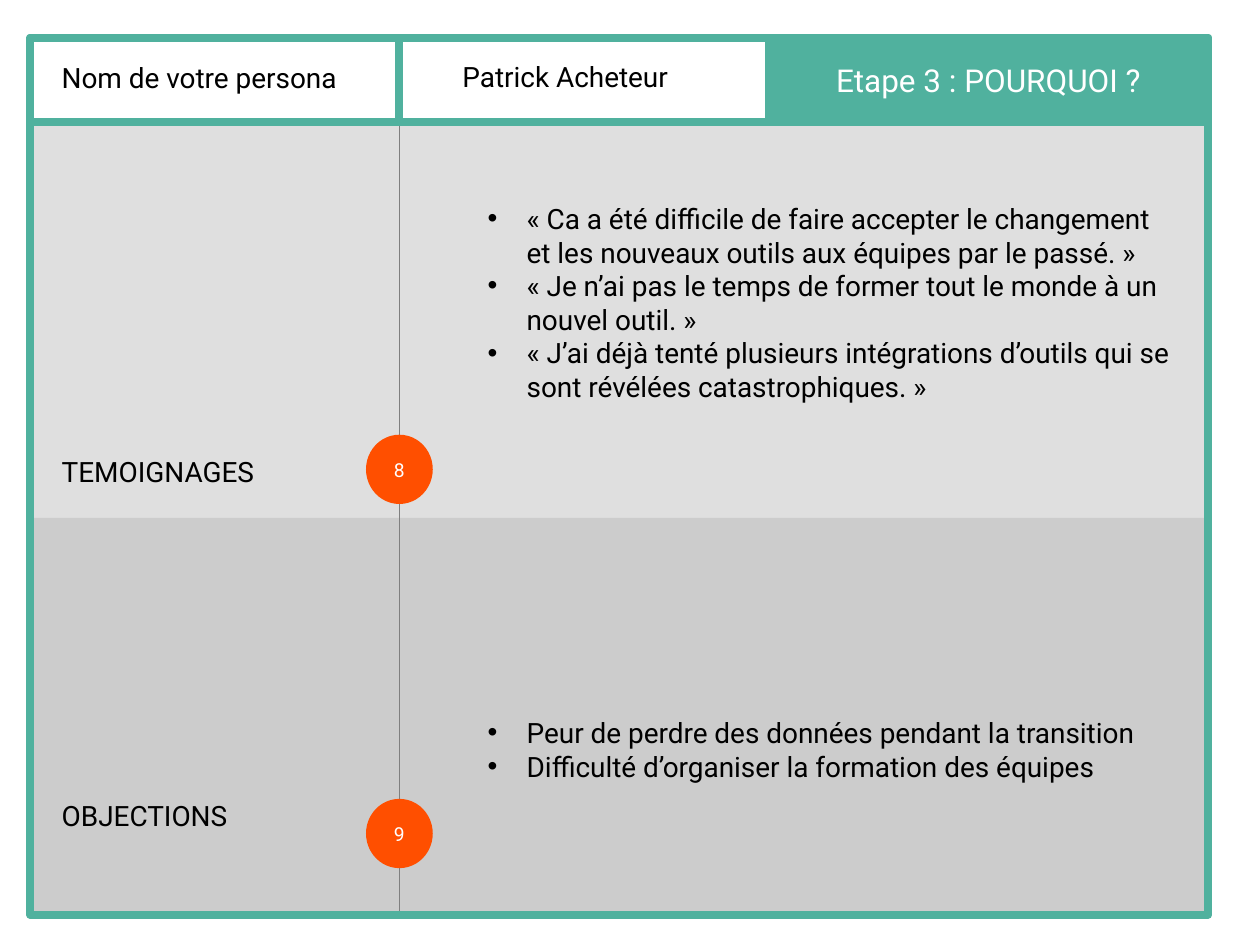
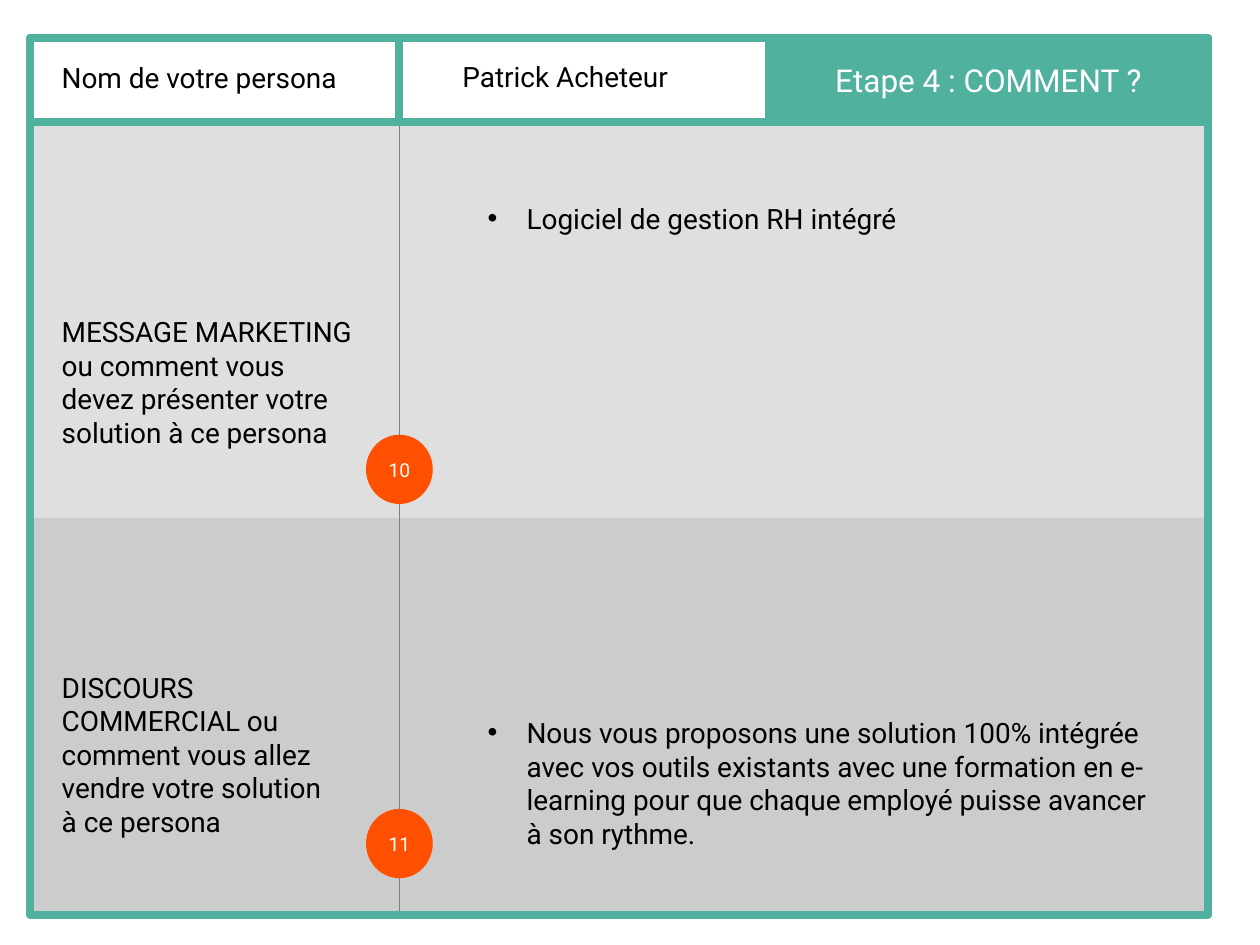
from dataclasses import dataclass

from lxml import etree
from pptx import Presentation
from pptx.dml.color import RGBColor
from pptx.enum.shapes import MSO_CONNECTOR as Connector, MSO_SHAPE as Shape
from pptx.enum.text import MSO_ANCHOR as Anchor, MSO_AUTO_SIZE as AutoSize, PP_ALIGN as Align
from pptx.oxml.ns import qn
from pptx.util import Inches, Pt

PERSONA_LABEL = "Nom de votre persona"
PERSONA_NAME = "Patrick Acheteur"

# Boxes are (top, width, height) in inches.
STEPS = [
    {
        "title": "Etape 3 : POURQUOI ?",
        "rows": [
            {
                "number": 8, "badge_top": 3.45,
                "label": "TEMOIGNAGES", "label_box": (3.56, 1.74, 0.41),
                "points": [
                    "« Ca a été difficile de faire accepter le changement et les nouveaux outils aux équipes par le passé. »",
                    "« Je n’ai pas le temps de former tout le monde à un nouvel outil. »",
                    "« J’ai déjà tenté plusieurs intégrations d’outils qui se sont révélées catastrophiques. »",
                ],
                "points_box": (1.55, 5.6, 1.93),
            },
            {
                "number": 9, "badge_top": 6.34,
                "label": "OBJECTIONS", "label_box": (6.29, 2.26, 0.41),
                "points": [
                    "Peur de perdre des données pendant la transition",
                    "Difficulté d’organiser la formation des équipes",
                ],
                "points_box": (5.63, 5.51, 0.71),
            },
        ],
    },
    {
        "title": "Etape 4 : COMMENT ?",
        "rows": [
            {
                "number": 10, "badge_top": 3.45,
                "label": "MESSAGE MARKETING ou comment vous devez présenter votre solution à ce persona",
                "label_box": (2.45, 2.46, 1.63),
                "points": ["Logiciel de gestion RH intégré"],
                "points_box": (1.55, 5.6, 0.41),
            },
            {
                "number": 11, "badge_top": 6.42,
                "label": "DISCOURS COMMERCIAL ou comment vous allez vendre votre solution à ce persona",
                "label_box": (5.27, 2.26, 1.63),
                "points": [
                    "Nous vous proposons une solution 100% intégrée avec vos outils existants avec une "
                    "formation en e-learning pour que chaque employé puisse avancer à son rythme.",
                ],
                "points_box": (5.63, 5.36, 1.32),
            },
        ],
    },
]


@dataclass(frozen=True)
class Theme:
    font: str = "Roboto"
    frame: str = "50B19E"
    bands: tuple = ("DFDFDF", "CCCCCC")
    divider: str = "7F7F7F"
    badge: str = "FF4F00"
    dark: str = "000000"
    light: str = "FFFFFF"
    title_size: int = 18
    body_size: int = 16
    badge_size: int = 11
    frame_width: float = 4.5
    divider_width: float = 0.25


THEME = Theme()

LEFT, TOP, WIDTH, HEIGHT = 0.24, 0.3, 9.35, 6.96
HEADER_HEIGHT = 0.67
COLUMN = 2.93
DIVIDER_X = LEFT + COLUMN
BOTTOM = TOP + HEIGHT
BAND_EDGES = (0.99, 4.11, BOTTOM)
LABEL_X, NAME_X, POINTS_X = 0.44, 3.62, 3.82
BADGE_WIDTH, BADGE_HEIGHT = 0.53, 0.55
INSET = 0.05
BULLET_INDENT = 0.31


def inches(*lengths):
    return [Inches(length) for length in lengths]


def write(shape, *texts, size=THEME.body_size, color=THEME.dark, align=Align.LEFT,
          anchor=Anchor.TOP, bullets=False):
    """Fill a shape with one paragraph per text."""
    frame = shape.text_frame
    frame.word_wrap = True
    frame.auto_size = AutoSize.NONE
    frame.vertical_anchor = anchor
    frame.margin_left = frame.margin_right = frame.margin_top = frame.margin_bottom = Inches(INSET)
    for index, text in enumerate(texts):
        paragraph = frame.paragraphs[0] if index == 0 else frame.add_paragraph()
        paragraph.alignment = align
        run = paragraph.add_run()
        run.text = text
        run.font.name = THEME.font
        run.font.size = Pt(size)
        run.font.color.rgb = RGBColor.from_string(color)
        if bullets:
            add_bullet(paragraph)


def add_bullet(paragraph):
    properties = paragraph._p.get_or_add_pPr()
    indent = Inches(BULLET_INDENT)
    properties.set("marL", str(indent))
    properties.set("indent", str(-indent))
    etree.SubElement(properties, qn("a:buFont")).set("typeface", "Arial")
    etree.SubElement(properties, qn("a:buChar")).set("char", "•")


def paint(shape, fill=None, line=None):
    if fill:
        shape.fill.solid()
        shape.fill.fore_color.rgb = RGBColor.from_string(fill)
    else:
        shape.fill.background()
    if line:
        shape.line.color.rgb = RGBColor.from_string(line)
        shape.line.width = Pt(THEME.frame_width)
    else:
        shape.line.fill.background()


def add_box(slide, left, top, width, height, kind=Shape.RECTANGLE, fill=None, line=None):
    shape = slide.shapes.add_shape(kind, *inches(left, top, width, height))
    shape.shadow.inherit = False
    paint(shape, fill, line)
    return shape


def add_text(slide, left, box, *texts, **style):
    top, width, height = box
    write(slide.shapes.add_textbox(*inches(left, top, width, height)), *texts, **style)


def add_divider(slide):
    top = TOP + HEADER_HEIGHT
    line = slide.shapes.add_connector(Connector.STRAIGHT, *inches(DIVIDER_X, top, DIVIDER_X, BOTTOM))
    line.line.color.rgb = RGBColor.from_string(THEME.divider)
    line.line.width = Pt(THEME.divider_width)
    etree.SubElement(line._element.spPr, qn("a:effectLst"))


def add_header(slide, title_text):
    add_box(slide, LEFT, TOP, WIDTH, HEIGHT, line=THEME.frame)
    for column in range(2):
        add_box(slide, LEFT + column * COLUMN, TOP, COLUMN, HEADER_HEIGHT, line=THEME.frame)
    add_text(slide, LABEL_X, (0.43, 2.4, 0.41), PERSONA_LABEL)
    add_text(slide, NAME_X, (0.42, 2.4, 0.41), PERSONA_NAME)

    title = slide.shapes.title
    title.left, title.top, title.width, title.height = inches(
        LEFT + 2 * COLUMN, TOP, WIDTH - 2 * COLUMN, HEADER_HEIGHT)
    paint(title, THEME.frame, THEME.frame)
    write(title, title_text, size=THEME.title_size, color=THEME.light,
          align=Align.CENTER, anchor=Anchor.MIDDLE)
    title.element.getparent().append(title.element)  # bring above the bands


def add_row(slide, row):
    add_text(slide, LABEL_X, row["label_box"], row["label"])
    add_text(slide, POINTS_X, row["points_box"], *row["points"], bullets=True)
    badge = add_box(slide, DIVIDER_X - BADGE_WIDTH / 2, row["badge_top"], BADGE_WIDTH, BADGE_HEIGHT,
                    kind=Shape.OVAL, fill=THEME.badge)
    write(badge, str(row["number"]), size=THEME.badge_size, color=THEME.light,
          align=Align.CENTER, anchor=Anchor.MIDDLE)


def add_step(presentation, step):
    slide = presentation.slides.add_slide(presentation.slide_layouts[5])
    for color, top, bottom in zip(THEME.bands, BAND_EDGES, BAND_EDGES[1:]):
        add_box(slide, LEFT, top, WIDTH, bottom - top, fill=color)
    add_divider(slide)
    add_header(slide, step["title"])
    for row in step["rows"]:
        add_row(slide, row)


def main():
    presentation = Presentation()
    presentation.slide_width, presentation.slide_height = inches(10, 7.5)
    for step in STEPS:
        add_step(presentation, step)
    presentation.save("out.pptx")


if __name__ == "__main__":
    main()
